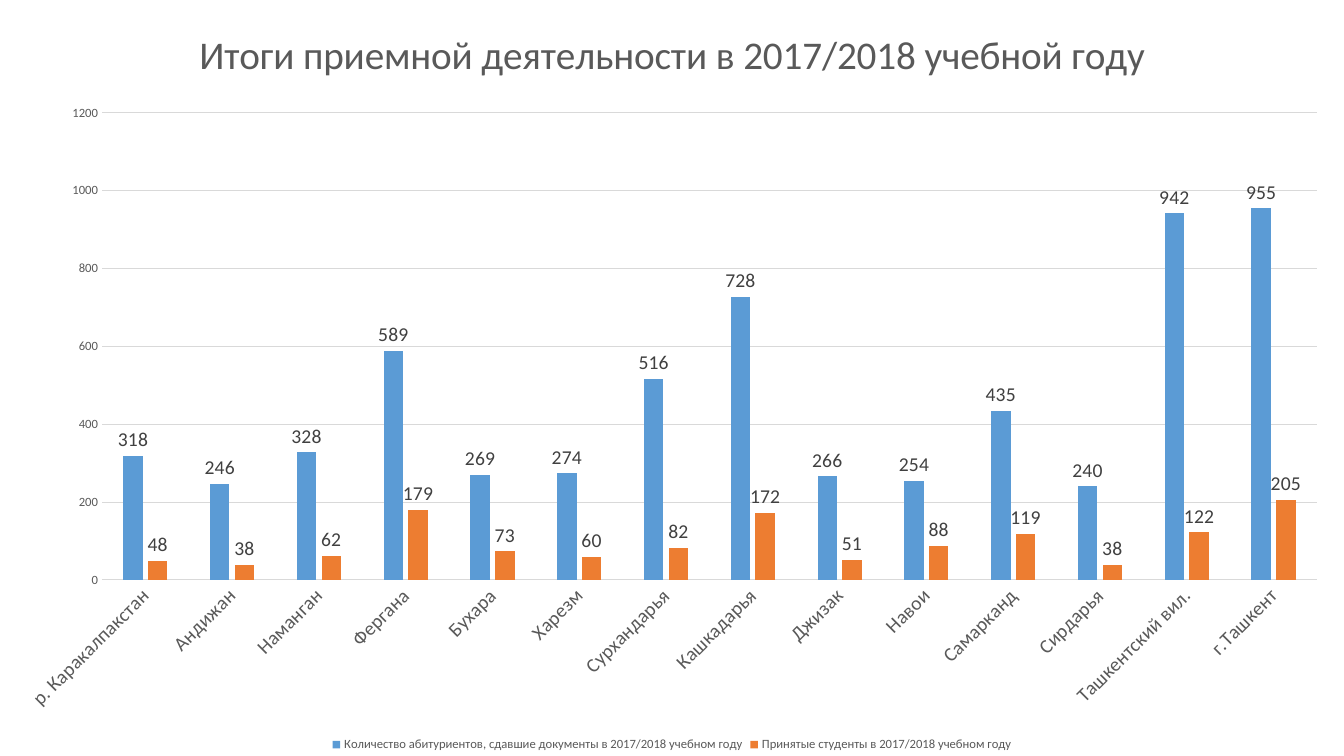
from dataclasses import dataclass
from typing import Any

from lxml.etree import SubElement
from pptx import Presentation
from pptx.chart.axis import _BaseAxis as Axis
from pptx.chart.chart import Chart
from pptx.chart.data import CategoryChartData
from pptx.chart.series import BarSeries
from pptx.dml.color import RGBColor
from pptx.enum.chart import XL_CHART_TYPE as ChartType
from pptx.enum.chart import XL_LABEL_POSITION as LabelPosition
from pptx.enum.chart import XL_LEGEND_POSITION as LegendPosition
from pptx.enum.chart import XL_TICK_MARK as TickMark
from pptx.oxml import parse_xml
from pptx.oxml.ns import nsdecls, qn
from pptx.util import Emu, Pt

SLIDE_WIDTH, SLIDE_HEIGHT = 1344, 756
EMU_PER_PX = 12192000 / SLIDE_WIDTH
PLOT_LEFT, PLOT_TOP, PLOT_WIDTH, PLOT_HEIGHT = 102, 113, 1215, 467

COLORS = {
    "applicants": "5B9BD5",
    "admitted": "ED7D31",
    "text": "595959",
    "value": "404040",
    "rule": "D9D9D9",
    "background": "FFFFFF",
}
TITLE = "Итоги приемной деятельности в 2017/2018 учебной году"
REGIONS = [
    "р. Каракалпакстан", "Андижан", "Наманган", "Фергана", "Бухара",
    "Харезм", "Сурхандарья", "Кашкадарья", "Джизак", "Навои",
    "Самарканд", "Сирдарья", "Ташкентский вил.", "г.Ташкент",
]


@dataclass(frozen=True)
class Count:
    name: str
    values: tuple[int, ...]
    color: str


COUNTS = [
    Count(
        "Количество абитуриентов, сдавшие документы в 2017/2018 учебном году",
        (318, 246, 328, 589, 269, 274, 516, 728, 266, 254, 435, 240, 942, 955),
        "applicants",
    ),
    Count(
        "Принятые студенты в 2017/2018 учебном году",
        (48, 38, 62, 179, 73, 60, 82, 172, 51, 88, 119, 38, 122, 205),
        "admitted",
    ),
]


def px(length: int) -> Emu:
    return Emu(round(length * EMU_PER_PX))


def rgb(name: str) -> RGBColor:
    return RGBColor.from_string(COLORS[name])


def apply(target: Any, values: dict[str, Any]) -> None:
    for attribute, value in values.items():
        setattr(target, attribute, value)


def style_font(font: Any, size: int, color: str = "text") -> None:
    apply(font, {"size": Pt(size), "name": "Calibri", "bold": False})
    font.color.rgb = rgb(color)


def style_line(line: Any) -> None:
    line.width = Pt(0.75)
    line.color.rgb = rgb("rule")


def style_axis(axis: Axis, size: int) -> None:
    apply(axis, {"major_tick_mark": TickMark.NONE, "minor_tick_mark": TickMark.NONE})
    style_font(axis.tick_labels.font, size)


def style_series(series: BarSeries, count: Count) -> None:
    series.format.fill.solid()
    series.format.fill.fore_color.rgb = rgb(count.color)
    labels = series.data_labels
    apply(labels, {"show_value": True, "position": LabelPosition.OUTSIDE_END})
    style_font(labels.font, 14, "value")


def place_plot(chart: Chart) -> None:
    """Fix the inner plot area as fractions of the chart."""
    plot_area = chart._chartSpace.chart.plotArea
    for old_layout in plot_area.findall(qn("c:layout")):
        plot_area.remove(old_layout)
    layout = parse_xml(f"<c:layout {nsdecls('c')}/>")
    manual = SubElement(layout, qn("c:manualLayout"))
    settings = {
        "layoutTarget": "inner", "xMode": "edge", "yMode": "edge",
        "x": PLOT_LEFT / SLIDE_WIDTH, "y": PLOT_TOP / SLIDE_HEIGHT,
        "w": PLOT_WIDTH / SLIDE_WIDTH, "h": PLOT_HEIGHT / SLIDE_HEIGHT,
    }
    for tag, value in settings.items():
        SubElement(manual, qn(f"c:{tag}")).set("val", str(value))
    plot_area.insert(0, layout)


def style_chart(chart: Chart) -> None:
    style_font(chart.font, 10)
    chart.has_title = True
    heading = chart.chart_title.text_frame
    heading.text = TITLE
    style_font(heading.paragraphs[0].runs[0].font, 28)
    chart.chart_title.include_text_in_layout = False

    chart.has_legend = True
    apply(chart.legend, {"position": LegendPosition.BOTTOM, "include_in_layout": False})
    style_font(chart.legend.font, 9)

    regions, amounts = chart.category_axis, chart.value_axis
    style_axis(regions, 14)
    style_line(regions.format.line)
    regions._element.get_or_add_txPr().bodyPr.set("rot", "-2700000")
    style_axis(amounts, 9)
    apply(amounts, {"minimum_scale": 0, "maximum_scale": 1200, "major_unit": 200})
    amounts.format.line.fill.background()
    style_line(amounts.major_gridlines.format.line)

    bars = chart.plots[0]
    apply(bars, {"gap_width": 219, "overlap": -27, "vary_by_categories": False})
    for series, count in zip(bars.series, COUNTS):
        style_series(series, count)
    place_plot(chart)


def main() -> None:
    deck = Presentation()
    apply(deck, {"slide_width": px(SLIDE_WIDTH), "slide_height": px(SLIDE_HEIGHT)})
    slide = deck.slides.add_slide(deck.slide_layouts[6])
    slide.background.fill.solid()
    slide.background.fill.fore_color.rgb = rgb("background")

    admissions = CategoryChartData()
    admissions.categories = REGIONS
    for count in COUNTS:
        admissions.add_series(count.name, count.values)
    frame = slide.shapes.add_chart(
        ChartType.COLUMN_CLUSTERED, 0, 0, px(SLIDE_WIDTH), px(SLIDE_HEIGHT), admissions
    )
    style_chart(frame.chart)
    deck.save("out.pptx")


if __name__ == "__main__":
    main()
